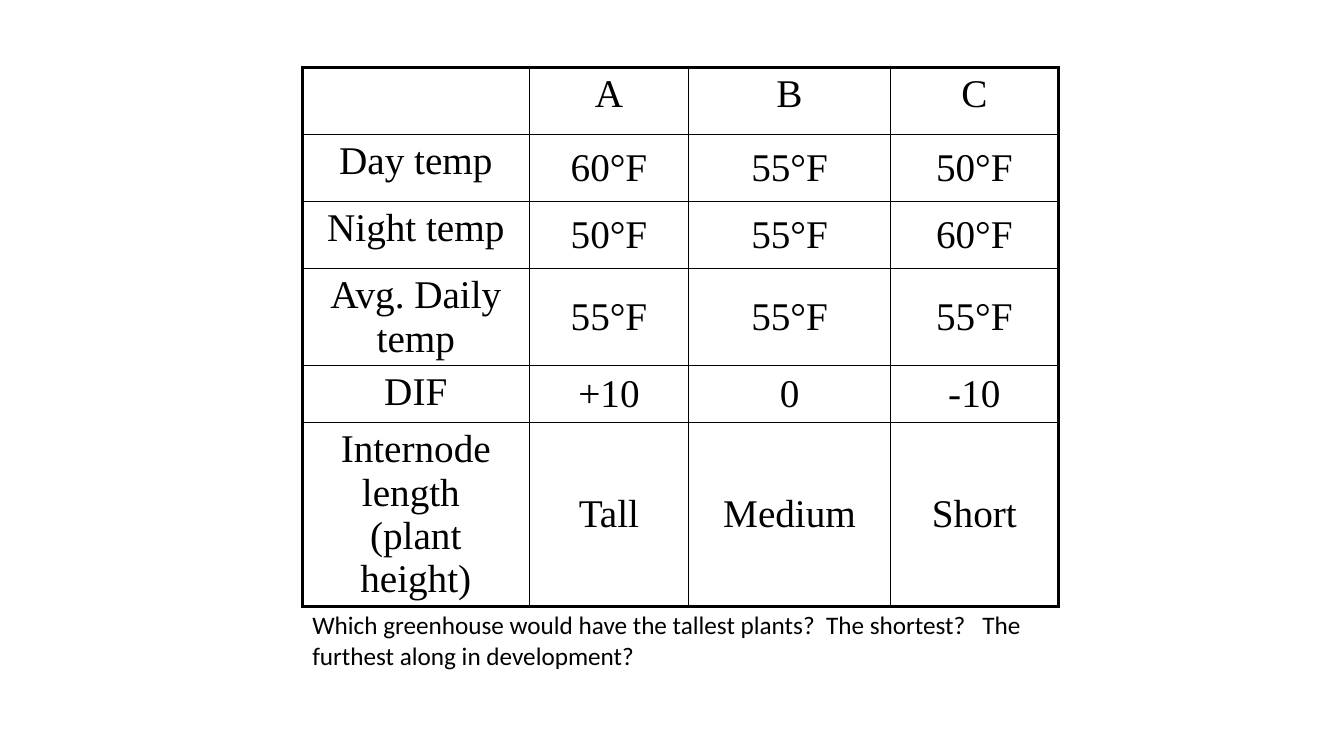
from lxml import etree
from pptx import Presentation, util as u
from pptx.dml.color import RGBColor
from pptx.enum import text
from pptx.oxml import ns

BLACK = RGBColor(0, 0, 0)
GRID_COLS, GRID_ROWS = 160, 90
COL_WIDTHS = [27, 19, 24, 20]
ROW_HEIGHTS = [8, 8, 8, 11.2, 6.8, 12.2]
GREENHOUSES = [
    ["", "A", "B", "C"],
    ["Day temp", "60°F", "55°F", "50°F"],
    ["Night temp", "50°F", "55°F", "60°F"],
    ["Avg. Daily temp", "55°F", "55°F", "55°F"],
    ["DIF", "+10", "0", "-10"],
    ["Internode length \n(plant height)", "Tall", "Medium", "Short"],
]
QUESTION = ("Which greenhouse would have the tallest plants?  The shortest?   "
            "The furthest along in development?")


class Deck:
    table_font, table_size = "Times New Roman", 28
    body_font, body_size = "Calibri", 18
    thin, thick = 1, 2.25

    def __init__(self):
        self.prs = Presentation()
        self.prs.slide_width = u.Inches(13.33)
        self.prs.slide_height = u.Inches(7.5)
        self.s = self.prs.slides.add_slide(self.prs.slide_layouts[6])

    def x(self, cols):
        return round(self.prs.slide_width * cols / GRID_COLS)

    def y(self, rows):
        return round(self.prs.slide_height * rows / GRID_ROWS)

    def add_words(self, p, words, font, size):
        for i, line in enumerate(words.split("\n")):
            if i:
                p.add_line_break()
            r = p.add_run()
            r.text = line
            r.font.name, r.font.size = font, u.Pt(size)
            r.font.color.rgb = BLACK

    def border(self, cell, side, width):
        tcPr = cell._tc.get_or_add_tcPr()
        ln = etree.SubElement(tcPr, ns.qn(f"a:ln{side}"), w=str(u.Pt(width)))
        fill = etree.SubElement(ln, ns.qn("a:solidFill"))
        etree.SubElement(fill, ns.qn("a:srgbClr"), val=str(BLACK))

    def table(self, left, top, widths, heights, data):
        frame = self.s.shapes.add_table(
            len(heights), len(widths), self.x(left), self.y(top),
            self.x(sum(widths)), self.y(sum(heights)))
        tbl = frame.table
        tbl.first_row = tbl.horz_banding = False
        for col, width in zip(tbl.columns, widths):
            col.width = self.x(width)
        for row, height in zip(tbl.rows, heights):
            row.height = self.y(height)
        last_row, last_col = len(heights) - 1, len(widths) - 1
        for i, row in enumerate(data):
            for j, words in enumerate(row):
                cell = tbl.cell(i, j)
                edges = {"L": j == 0, "R": j == last_col,
                         "T": i == 0, "B": i == last_row}
                for side, outer in edges.items():
                    self.border(cell, side, self.thick if outer else self.thin)
                cell.fill.background()
                if i and j:
                    cell.vertical_anchor = text.MSO_ANCHOR.MIDDLE
                p = cell.text_frame.paragraphs[0]
                p.alignment = text.PP_ALIGN.CENTER
                if words:
                    self.add_words(p, words, self.table_font, self.table_size)

    def text(self, left, top, width, height, words):
        sp = self.s.shapes.add_textbox(
            self.x(left), self.y(top), self.x(width), self.y(height))
        tf = sp.text_frame
        tf.word_wrap = True
        tf.auto_size = text.MSO_AUTO_SIZE.SHAPE_TO_FIT_TEXT
        self.add_words(tf.paragraphs[0], words, self.body_font, self.body_size)


def main():
    deck = Deck()
    deck.table(36, 8, COL_WIDTHS, ROW_HEIGHTS, GREENHOUSES)
    deck.text(36, 72, 91, 8.5, QUESTION)
    deck.prs.save("out.pptx")


if __name__ == "__main__":
    main()
